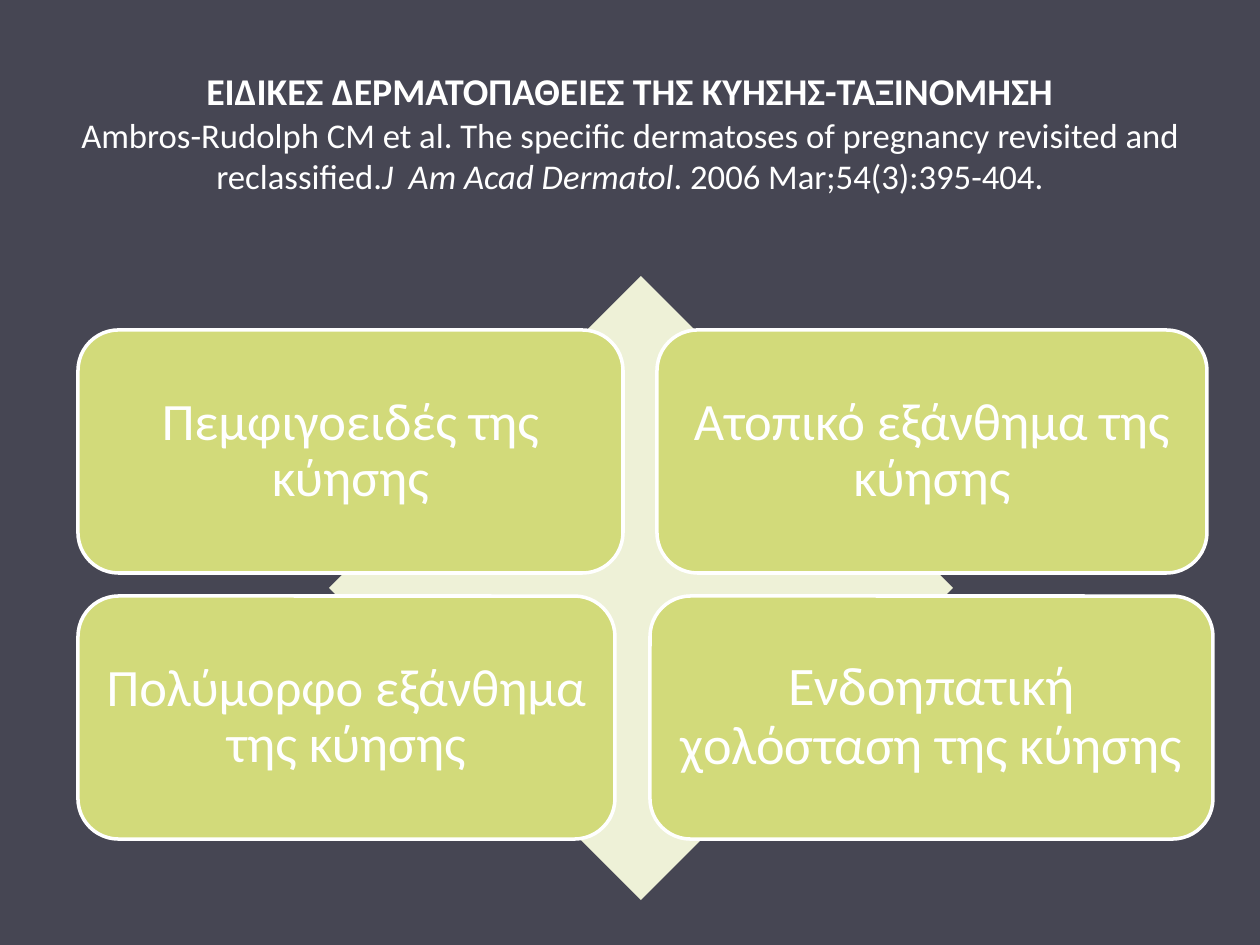
from pptx import Presentation
from pptx.dml.color import RGBColor
from pptx.enum.shapes import MSO_SHAPE
from pptx.enum.text import MSO_ANCHOR, PP_ALIGN
from pptx.util import Pt

COLORS = {"background": "464653", "diamond": "EEF1D7", "box": "D2DA7A", "white": "FFFFFF"}
FONT = "Calibri"
PX = 914400 / 126

HEADING = "ΕΙΔΙΚΕΣ ΔΕΡΜΑΤΟΠΑΘΕΙΕΣ ΤΗΣ ΚΥΗΣΗΣ-ΤΑΞΙΝΟΜΗΣΗ"
# Citation parts: text, italic
CITATION = [
    ("Ambros-Rudolph CM et al. The specific dermatoses of pregnancy revisited and reclassified.", False),
    ("J  Am Acad Dermatol", True),
    (". 2006 Mar;54(3):395-404.", False),
]
# Dermatoses: text, row, left, width, text size
DERMATOSES = [
    ("Πολύμορφο εξάνθημα της κύησης", 1, 78, 537, 30),
    ("Ατοπικό εξάνθημα της κύησης", 0, 657, 550, 30),
    ("Πεμφιγοειδές της κύησης", 0, 78, 545, 30),
    ("Ενδοηπατική χολόσταση της κύησης", 1, 650, 563, 31),
]
FIRST_ROW, ROW_STEP, BOX_HEIGHT, BOX_INSET = 330, 266, 243, 15


def px(*lengths):
    return [round(length * PX) for length in lengths]


def color(name):
    return RGBColor.from_string(COLORS[name])


def style(run, size, bold=False, italic=False):
    run.font.name = FONT
    run.font.size = Pt(size)
    run.font.bold = bold
    run.font.italic = italic
    run.font.color.rgb = color("white")


def add_filled(kind, fill, *box):
    shape = slide.shapes.add_shape(kind, *px(*box))
    shape.shadow.inherit = False
    shape.fill.solid()
    shape.fill.fore_color.rgb = color(fill)
    return shape


presentation = Presentation()
presentation.slide_width, presentation.slide_height = px(1260, 945)
slide = presentation.slides.add_slide(presentation.slide_layouts[6])
slide.background.fill.solid()
slide.background.fill.fore_color.rgb = color("background")

# Heading with its citation
title_frame = slide.shapes.add_textbox(*px(63, 38, 1134, 189)).text_frame
title_frame.word_wrap = True
title_frame.vertical_anchor = MSO_ANCHOR.MIDDLE
title = title_frame.paragraphs[0]
title.alignment = PP_ALIGN.CENTER
title.text = HEADING
style(title.runs[0], 21.6, bold=True)
title.add_line_break()
for text, italic in CITATION:
    part = title.add_run()
    part.text = text
    style(part, 19.8, italic=italic)

# Diamond behind the boxes
diamond = add_filled(MSO_SHAPE.DIAMOND, "diamond", 329, 276, 624, 624)
diamond.line.fill.background()

# Four dermatoses
for text, row, left, width, size in DERMATOSES:
    box = add_filled(MSO_SHAPE.ROUNDED_RECTANGLE, "box",
                     left, FIRST_ROW + row * ROW_STEP, width, BOX_HEIGHT)
    box.line.color.rgb = color("white")
    box.line.width = Pt(2)
    frame = box.text_frame
    frame.word_wrap = True
    frame.vertical_anchor = MSO_ANCHOR.MIDDLE
    frame.margin_left, frame.margin_top, frame.margin_right, frame.margin_bottom = px(*[BOX_INSET] * 4)
    frame.text = text
    label = frame.paragraphs[0]
    label.alignment = PP_ALIGN.CENTER
    label.line_spacing = 0.9
    style(label.runs[0], size)

presentation.save("out.pptx")
